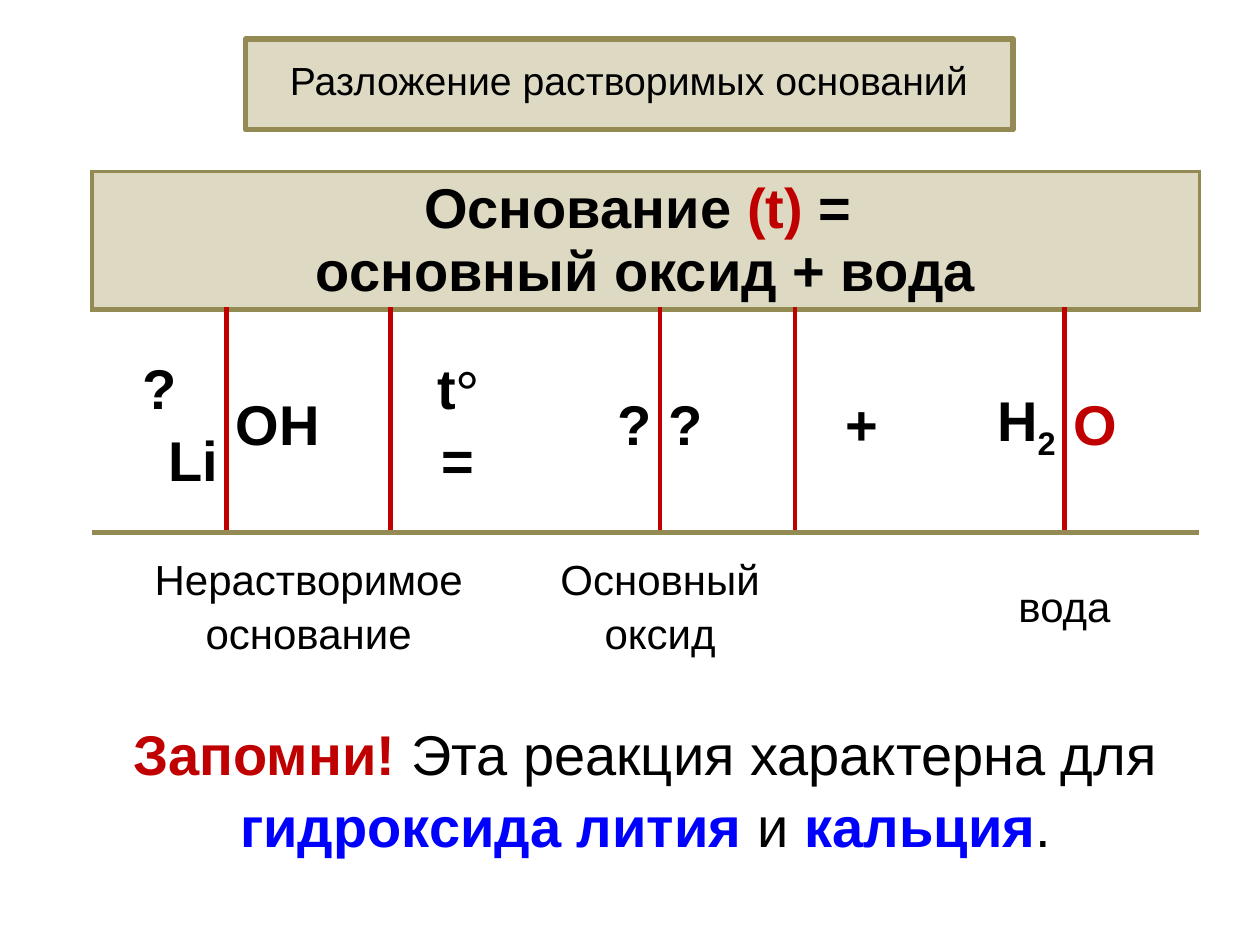
import pptx
import pptx.dml.color
import pptx.enum.shapes
import pptx.enum.text
import pptx.oxml
import pptx.oxml.ns
import pptx.util
from dataclasses import dataclass

Inches = pptx.util.Inches
ALIGN = pptx.enum.text.PP_ALIGN
MIDDLE = pptx.enum.text.MSO_ANCHOR.MIDDLE


@dataclass(frozen=True)
class Theme:
    """Colours, fonts and sizes of the slide."""
    sand: str = "DDD9C3"
    olive: str = "948A54"
    red: str = "C00000"
    blue: str = "0000FF"
    black: str = "000000"
    font: str = "Arial"
    degree_font: str = "Times New Roman"
    title: float = 22.4
    label: float = 24
    formula: float = 32
    thick: float = 3
    thin: float = 2.25


THEME = Theme()
PLAIN = {"size": THEME.formula, "bold": False, "color": THEME.black, "name": THEME.font}
BOLD = {**PLAIN, "bold": True}
RED = {**BOLD, "color": THEME.red}
BLUE = {**BOLD, "color": THEME.blue}
LABEL = {**PLAIN, "size": THEME.label}
TITLE = {**PLAIN, "size": THEME.title}
DEGREE = {**BOLD, "name": THEME.degree_font}
EDGE = (THEME.olive, THEME.thick)
RIM = (THEME.olive, THEME.thin)
DIVIDER = (THEME.red, THEME.thick)


def rgb(value):
    """Turn a hex string into a colour."""
    return pptx.dml.color.RGBColor.from_string(value)


def add_span(para, text, style):
    """Add one run with the given format values."""
    span = para.add_run()
    span.text = text
    values = {**style, "size": pptx.util.Pt(style["size"])}
    span.font.color.rgb = rgb(values.pop("color"))
    for name, value in values.items():
        setattr(span.font, name, value)
    return span


def write(frame, lines, spacing=None):
    """Fill a text frame with (alignment, spans) lines."""
    for number, (alignment, spans) in enumerate(lines):
        para = frame.add_paragraph() if number else frame.paragraphs[0]
        para.alignment = alignment
        if spacing:
            para.line_spacing = spacing
        for text, style in spans:
            add_span(para, text, style)


def set_borders(cell, **sides):
    """Draw the named sides (L, R, T, B) of a cell as (colour, width)."""
    properties = cell._tc.get_or_add_tcPr()
    drawn = [side for side in "LRTB" if side in sides]
    for place, side in enumerate(drawn):
        color, width = sides[side]
        properties.insert(place, pptx.oxml.parse_xml(
            f'<a:ln{side} {pptx.oxml.ns.nsdecls("a")} w="{pptx.util.Pt(width)}">'
            f'<a:solidFill><a:srgbClr val="{color}"/></a:solidFill></a:ln{side}>'))


def fill_cell(cell, lines):
    """Write centred body text into a table cell."""
    for name, value in {"margin_left": 0.07, "margin_right": 0.07,
                        "margin_top": 0, "margin_bottom": 0}.items():
        setattr(cell, name, Inches(value))
    cell.vertical_anchor = MIDDLE
    write(cell.text_frame, lines, 1.15)


def add_title(page, box):
    """Place the framed title in its box."""
    shape = page.shapes.add_shape(
        pptx.enum.shapes.MSO_SHAPE.ROUNDED_RECTANGLE, *map(Inches, box))
    shape.adjustments[0] = 0
    shape.shadow.inherit = False
    shape.fill.solid()
    shape.fill.fore_color.rgb = rgb(THEME.sand)
    shape.line.color.rgb = rgb(THEME.olive)
    shape.line.width = pptx.util.Pt(THEME.thick)
    shape.text_frame.word_wrap = True
    shape.text_frame.vertical_anchor = MIDDLE
    write(shape.text_frame,
          [(ALIGN.CENTER, [("Разложение растворимых оснований", TITLE)])], 0.8)


def fill_heading(table):
    """Write the general scheme across the first row."""
    cell = table.cell(0, 0)
    cell.merge(table.cell(0, 7))
    cell.fill.solid()
    cell.fill.fore_color.rgb = rgb(THEME.sand)
    set_borders(cell, L=RIM, R=RIM, T=RIM, B=EDGE)
    write(cell.text_frame, [
        (ALIGN.CENTER, [("Основание ", BOLD), ("(t) ", RED), ("= ", BOLD)]),
        (ALIGN.CENTER, [("основный оксид + вода", BOLD)])])


def fill_equation(table):
    """Write the equation, with a red divider inside each formula."""
    parts = [
        [(ALIGN.CENTER, [("?", BOLD)]), (ALIGN.RIGHT, [("Li", BOLD)])],
        [(ALIGN.LEFT, [("OH", BOLD)])],
        [(ALIGN.CENTER, [("t", BOLD), ("°", DEGREE)]), (ALIGN.CENTER, [("=", BOLD)])],
        [(ALIGN.RIGHT, [("?", BOLD)])],
        [(ALIGN.LEFT, [("?", BOLD)])],
        [(ALIGN.CENTER, [("+", BOLD)])],
        [(ALIGN.RIGHT, [("H", BOLD), ("2", BOLD)])],
        [(ALIGN.LEFT, [("O", RED)])],
    ]
    for column, lines in enumerate(parts):
        cell = table.cell(1, column)
        fill_cell(cell, lines)
        sides = {"T": EDGE}
        if column in (0, 3, 6):
            sides["R"] = DIVIDER
        if column in (1, 4, 7):
            sides["L"] = DIVIDER
        set_borders(cell, **sides)
    index = table.cell(1, 6).text_frame.paragraphs[0].runs[1]
    index._r.get_or_add_rPr().set("baseline", "-25000")


def fill_notes(table):
    """Write the substance names and the closing reminder."""
    names = [(0, 2, "Нерастворимое основание"), (3, 4, "Основный оксид"), (6, 7, "вода")]
    rows = [(2, first, last, [(text, LABEL)]) for first, last, text in names]
    rows.append((3, 0, 7, [
        ("Запомни! ", RED), ("Эта реакция характерна для ", PLAIN),
        ("гидроксида лития ", BLUE), ("и ", PLAIN), ("кальция", BLUE), (".", PLAIN)]))
    for row, first, last, spans in rows:
        cell = table.cell(row, first)
        cell.merge(table.cell(row, last))
        fill_cell(cell, [(ALIGN.CENTER, spans)])


def add_reaction_table(page, box):
    """Place the reaction table in its box."""
    table = page.shapes.add_table(4, 8, *map(Inches, box)).table
    for name in ("first_row", "horz_banding"):
        setattr(table, name, False)
    style = table._tbl.tblPr.find(pptx.oxml.ns.qn("a:tableStyleId"))
    style.text = "{2D5ABB26-0587-4C30-8999-92F81FD0307C}"
    for number, column in enumerate(table.columns):
        column.width = Inches(1.3 if number == 1 else 1.07)
    for row, height in zip(table.rows, (0.48, 1.77, 1.14, 1.77)):
        row.height = Inches(height)
    for cell in table.iter_cells():
        cell.fill.background()
    fill_heading(table)
    fill_equation(table)
    fill_notes(table)


def main():
    """Build and save the deck."""
    deck = pptx.Presentation()
    deck.slide_width, deck.slide_height = Inches(10), Inches(7.5)
    page = deck.slides.add_slide(deck.slide_layouts[6])
    add_title(page, (1.95, 0.31, 6.09, 0.72))
    add_reaction_table(page, (0.73, 1.36, 8.77, 5.92))
    deck.save("out.pptx")


if __name__ == "__main__":
    main()
